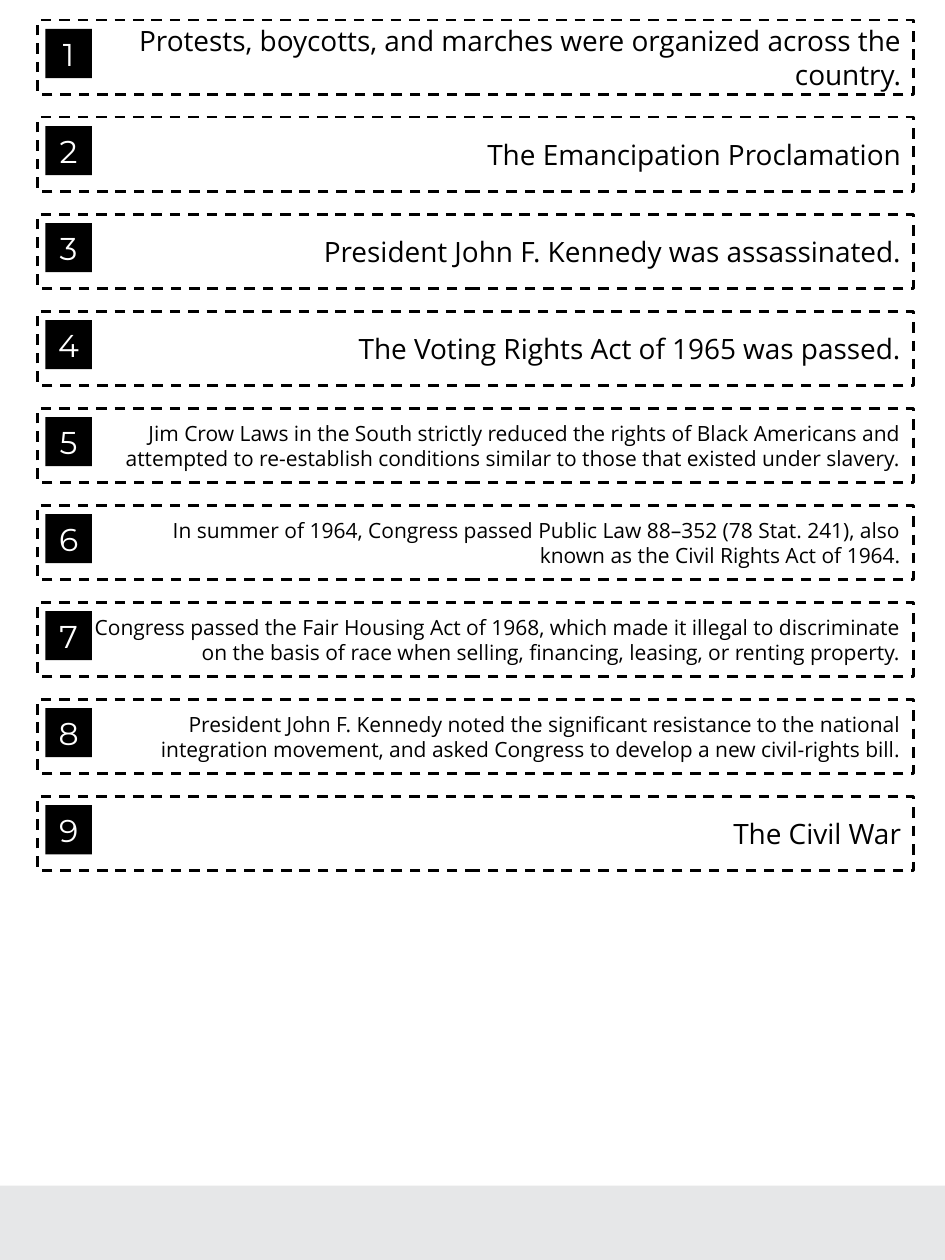
from pptx import Presentation
from pptx.dml.color import RGBColor
from pptx.enum.dml import MSO_LINE
from pptx.enum.shapes import MSO_SHAPE
from pptx.enum.text import MSO_ANCHOR, PP_ALIGN
from pptx.util import Inches, Pt

EVENTS = [
    ("Protests, boycotts, and marches were organized across the country.", 16, 0.1),
    ("The Emancipation Proclamation", 16, 0.1),
    ("President John F. Kennedy was assassinated.", 16, 0.1),
    ("The Voting Rights Act of 1965 was passed.", 16, 0.1),
    ("Jim Crow Laws in the South strictly reduced the rights of Black Americans and "
     "attempted to re-establish conditions similar to those that existed under slavery.", 12, 0.65),
    ("In summer of 1964, Congress passed Public Law 88–352 (78 Stat. 241), also known as "
     "the Civil Rights Act of 1964.", 12, 0.65),
    ("Congress passed the Fair Housing Act of 1968, which made it illegal to discriminate "
     "on the basis of race when selling, financing, leasing, or renting property.", 12, 0.4),
    ("President John F. Kennedy noted the significant resistance to the national "
     "integration movement, and asked Congress to develop a new civil-rights bill.", 12, 0.65),
    ("The Civil War", 16, 0.1),
]
FIRST_TOP, PITCH = 0.16, 0.77


def color(value):
    return RGBColor.from_string(value)


class EventSheet:
    """Draws numbered event strips on one slide in a shared style."""

    ink, paper, band = "000000", "FFFFFF", "E6E7E8"
    body_font, number_font = "Open Sans", "Montserrat"

    def __init__(self, slide):
        self.slide = slide
        slide.background.fill.solid()
        slide.background.fill.fore_color.rgb = color(self.paper)

    def rect(self, shapes, left, top, width, height, fill=None):
        sp = shapes.add_shape(MSO_SHAPE.RECTANGLE, Inches(left), Inches(top),
                              Inches(width), Inches(height))
        sp.shadow.inherit = False
        sp.line.fill.background()
        if fill:
            sp.fill.solid()
            sp.fill.fore_color.rgb = color(fill)
        else:
            sp.fill.background()
        return sp

    def label(self, sp, text, font, size, ink, align, left=0, right=0):
        tf = sp.text_frame
        tf.text = text
        tf.word_wrap = True
        tf.vertical_anchor = MSO_ANCHOR.MIDDLE
        tf.margin_left, tf.margin_right = Inches(left), Inches(right)
        tf.margin_top = tf.margin_bottom = 0
        p = tf.paragraphs[0]
        p.alignment = align
        r = p.runs[0]
        r.font.name, r.font.size = font, Pt(size)
        r.font.color.rgb = color(ink)

    def footer(self):
        self.rect(self.slide.shapes, 0, 9.41, 7.5, 0.59, self.band)

    def event(self, number, top, text, size, indent):
        shapes = self.slide.shapes.add_group_shape().shapes
        frame = self.rect(shapes, 0.3, top, 6.95, 0.59)
        frame.line.color.rgb = color(self.ink)
        frame.line.width = Pt(1.5)
        frame.line.dash_style = MSO_LINE.DASH
        self.label(frame, text, self.body_font, size, self.ink, PP_ALIGN.RIGHT, indent, 0.1)
        badge = self.rect(shapes, 0.36, top + 0.07, 0.37, 0.39, self.ink)
        self.label(badge, str(number), self.number_font, 18, self.paper, PP_ALIGN.CENTER)


def main():
    prs = Presentation()
    prs.slide_width, prs.slide_height = Inches(7.5), Inches(10)
    sheet = EventSheet(prs.slides.add_slide(prs.slide_layouts[6]))
    sheet.footer()
    for i, (text, size, indent) in enumerate(EVENTS):
        sheet.event(i + 1, FIRST_TOP + i * PITCH, text, size, indent)
    prs.save("out.pptx")


if __name__ == "__main__":
    main()
